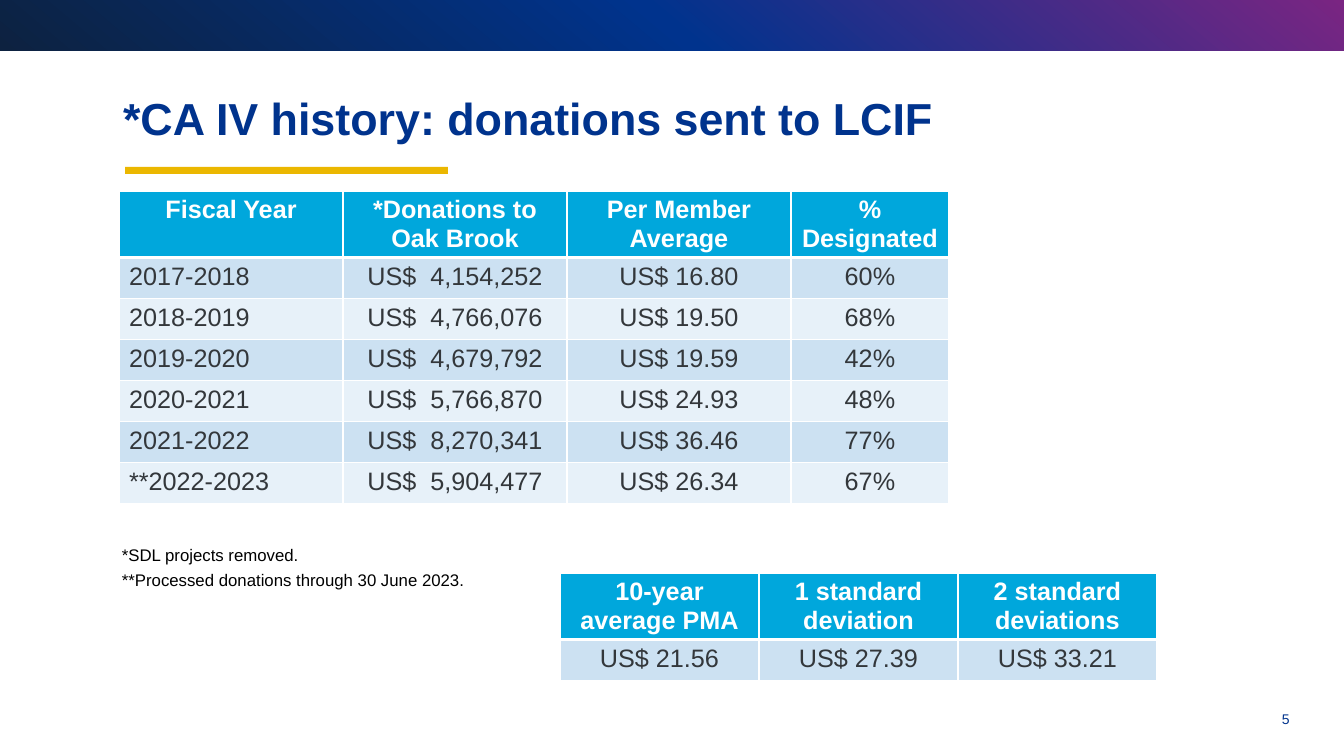
from copy import deepcopy
from dataclasses import dataclass

from lxml import etree
from pptx import Presentation, util as u
from pptx.dml.color import RGBColor
from pptx.enum import shapes, text
from pptx.oxml import ns

SCALE = 914400 / 100.8  # EMU in one px


@dataclass(frozen=True)
class Theme:
    font: str = "Arial"
    navy: str = "00338D"
    night: str = "0D2240"
    purple: str = "7A2582"
    gold: str = "EBB700"
    cyan: str = "00A7DC"
    bands: tuple = ("CCE1F2", "E7F1F9")
    ink: str = "33373B"
    black: str = "000000"
    white: str = "FFFFFF"
    title: int = 32
    table: int = 18
    note: int = 12
    number: int = 10


THEME = Theme()
CENTER = text.PP_ALIGN.CENTER
LEFT = text.PP_ALIGN.LEFT

HISTORY = [
    ["Fiscal Year", "*Donations to Oak Brook", "Per Member Average", "% Designated"],
    ["2017-2018", "US$  4,154,252", "US$ 16.80", "60%"],
    ["2018-2019", "US$  4,766,076", "US$ 19.50", "68%"],
    ["2019-2020", "US$  4,679,792", "US$ 19.59", "42%"],
    ["2020-2021", "US$  5,766,870", "US$ 24.93", "48%"],
    ["2021-2022", "US$  8,270,341", "US$ 36.46", "77%"],
    ["**2022-2023", "US$  5,904,477", "US$ 26.34", "67%"],
]
DEVIATIONS = [
    ["10-year average PMA", "1 standard deviation", "2 standard deviations"],
    ["US$ 21.56", "US$ 27.39", "US$ 33.21"],
]
NOTES = ["*SDL projects removed.", "**Processed donations through 30 June 2023."]


def px(*lengths):
    return [u.Emu(round(length * SCALE)) for length in lengths]


def style(para, size, color, bold=False, **layout):
    """Format a paragraph and its font."""
    para.font.color.rgb = RGBColor.from_string(color)
    font_format = {"name": THEME.font, "size": u.Pt(size), "bold": bold}
    for target, values in ((para.font, font_format), (para, layout)):
        for name, value in values.items():
            setattr(target, name, value)


def add_title(page, at, words):
    title = page.shapes.title
    title.left, title.top, title.width, title.height = px(*at)
    frame = title.text_frame
    frame.text = words
    frame.auto_size = text.MSO_AUTO_SIZE.NONE
    frame.vertical_anchor = text.MSO_ANCHOR.MIDDLE
    style(frame.paragraphs[0], THEME.title, THEME.navy, True,
          alignment=LEFT, line_spacing=0.9)


def add_text(page, at, lines, size, color):
    frame = page.shapes.add_textbox(*px(*at)).text_frame
    frame.word_wrap = True
    for index, line in enumerate(lines):
        para = frame.add_paragraph() if index else frame.paragraphs[0]
        para.text = line
        style(para, size, color, space_before=u.Pt(3.4 if index else 0))


def add_bar(page, at, colors):
    """Add a plain bar for one colour, or a slanted gradient for several."""
    bar = page.shapes.add_shape(shapes.MSO_SHAPE.RECTANGLE, *px(*at))
    bar.shadow.inherit = False
    bar.line.fill.background()
    if len(colors) == 1:
        bar.fill.solid()
        bar.fill.fore_color.rgb = RGBColor.from_string(colors[0])
        return
    bar.fill.gradient()
    bar.fill.gradient_angle = 50
    stop_list = bar.fill._fill._gradFill.gsLst
    for _ in colors[2:]:
        stop_list.append(deepcopy(stop_list[-1]))
    for index, (stop, color) in enumerate(zip(bar.fill.gradient_stops, colors)):
        stop.position = index / (len(colors) - 1)
        stop.color.rgb = RGBColor.from_string(color)


def add_borders(cell, top, bottom):
    properties = cell._tc.get_or_add_tcPr()
    for side, points in {"L": 1, "R": 1, "T": top, "B": bottom}.items():
        line = etree.SubElement(properties, ns.qn(f"a:ln{side}"), w=str(u.Pt(points)))
        fill = etree.SubElement(line, ns.qn("a:solidFill"))
        etree.SubElement(fill, ns.qn("a:srgbClr"), val=THEME.white)


def add_table(page, left, top, widths, rows, first_align=CENTER):
    heights = [65] + [41] * (len(rows) - 1)
    size = px(left, top, sum(widths), sum(heights))
    table = page.shapes.add_table(len(rows), len(widths), *size).table
    table.horz_banding = False
    for column, width in zip(table.columns, px(*widths)):
        column.width = width
    for r, (row, height) in enumerate(zip(rows, px(*heights))):
        table.rows[r].height = height
        header = r == 0
        for c, words in enumerate(row):
            cell = table.cell(r, c)
            cell.text = words
            add_borders(cell, 3 if r == 1 else 1, 3 if header else 1)
            cell.fill.solid()
            color = THEME.cyan if header else THEME.bands[(r - 1) % 2]
            cell.fill.fore_color.rgb = RGBColor.from_string(color)
            style(cell.text_frame.paragraphs[0], THEME.table,
                  THEME.white if header else THEME.ink, header,
                  alignment=CENTER if header or c else first_align)


def main():
    deck = Presentation()
    deck.slide_width, deck.slide_height = px(1344, 756)
    page = deck.slides.add_slide(deck.slide_layouts[5])

    # Top band, title and underline
    add_bar(page, (0, 0, 1344, 51), (THEME.night, THEME.navy, THEME.purple))
    add_title(page, (113, 92, 923, 58), "*CA IV history: donations sent to LCIF")
    add_bar(page, (125, 167, 323, 7), (THEME.gold,))

    # Donation history and average tables
    add_table(page, 119, 191, [224, 224, 224, 158], HISTORY, LEFT)
    add_table(page, 560, 573, [199] * 3, DEVIATIONS)

    # Footnotes and page number
    add_text(page, (112, 540, 440, 56), NOTES, THEME.note, THEME.black)
    add_text(page, (1272, 706, 72, 50), ["5"], THEME.number, THEME.navy)

    deck.save("out.pptx")


if __name__ == "__main__":
    main()
